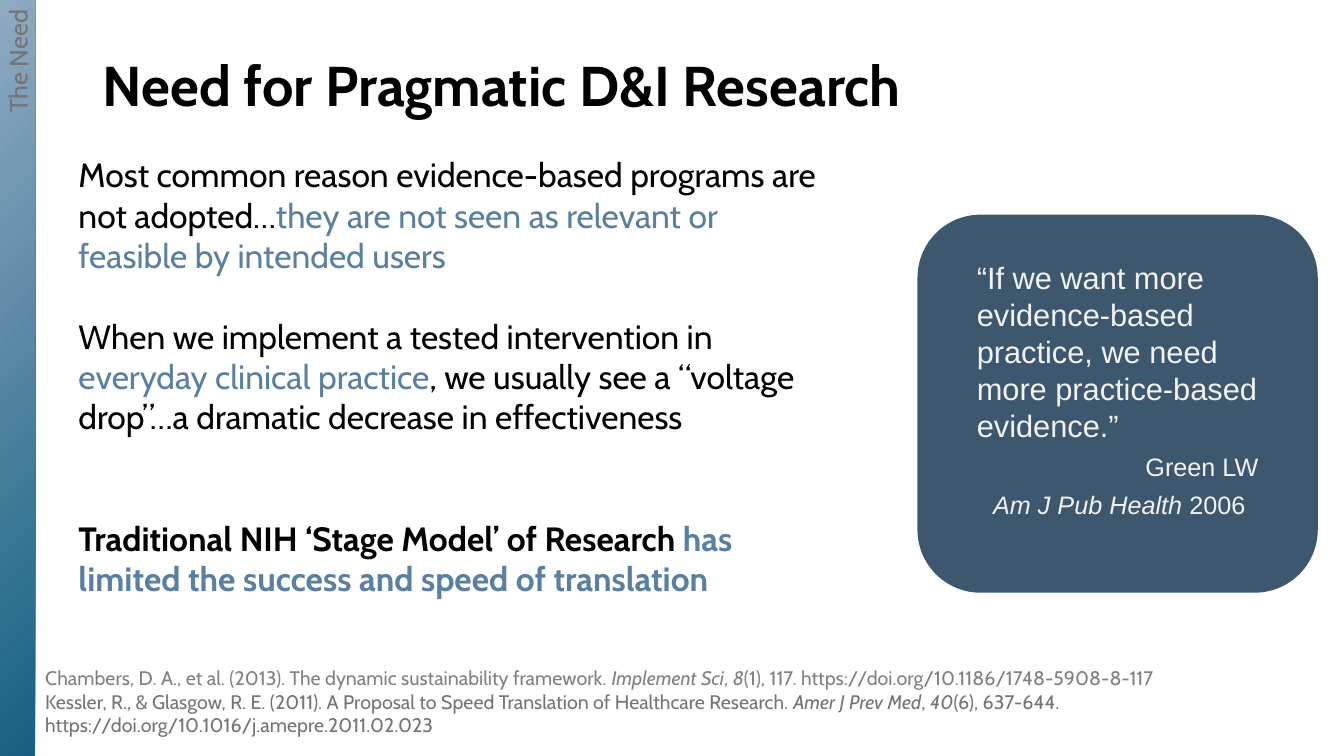
from lxml import etree
from pptx import Presentation
from pptx.dml.color import RGBColor
from pptx.enum.shapes import MSO_SHAPE
from pptx.enum.text import MSO_ANCHOR, PP_ALIGN
from pptx.oxml.ns import qn
from pptx.util import Inches, Pt

BLACK, BLUE, NAVY, PALE = "000000", "597FA1", "3D576F", "F2F2F2"
GREY, LIGHT_GREY = "747474", "808080"


def color(value):
    return RGBColor.from_string(value)


def span(text, **style):
    """A piece of text with its format: size, font, color, bold, italic."""
    return text, style


def para(*spans, **layout):
    """A paragraph with its format: align, before, line, right (indent in inches)."""
    return spans, layout


class Page:
    def __init__(self, deck, font):
        self.slide = deck.slides.add_slide(deck.slide_layouts[6])
        self.font = font

    def add_paras(self, frame, paras, **defaults):
        frame.word_wrap = True
        for index, (spans, layout) in enumerate(paras):
            paragraph = frame.paragraphs[0] if index == 0 else frame.add_paragraph()
            paragraph.alignment = layout.get("align", PP_ALIGN.LEFT)
            paragraph.space_before = Pt(layout.get("before", 0))
            paragraph.line_spacing = layout.get("line", 1.0)
            if "right" in layout:
                paragraph._p.get_or_add_pPr().set("marR", str(Inches(layout["right"])))
            for text, own in spans:
                style = {"font": self.font, **defaults, **own}
                run = paragraph.add_run()
                run.text = text
                run.font.name = style["font"]
                run.font.size = Pt(style["size"])
                run.font.bold = style.get("bold", False)
                run.font.italic = style.get("italic", False)
                run.font.color.rgb = color(style["color"])

    def text(self, left, top, width, height, paras, anchor=MSO_ANCHOR.TOP, **defaults):
        box = self.slide.shapes.add_textbox(
            Inches(left), Inches(top), Inches(width), Inches(height))
        box.text_frame.vertical_anchor = anchor
        self.add_paras(box.text_frame, paras, **defaults)

    def shape(self, kind, left, top, width, height, fill=None):
        shape = self.slide.shapes.add_shape(
            kind, Inches(left), Inches(top), Inches(width), Inches(height))
        shape.shadow.inherit = False
        shape.line.fill.background()
        if fill:
            shape.fill.solid()
            shape.fill.fore_color.rgb = color(fill)
        return shape

    def side_bar(self, width, height, label, start, end):
        bar = self.shape(MSO_SHAPE.RECTANGLE, 0, 0, width, height)
        bar.fill.gradient()
        for position, (stop, value) in enumerate(zip(bar.fill.gradient_stops, (start, end))):
            stop.color.rgb = color(value)
            stop.position = position
        # Radial gradient spreading from the top left corner
        gradient = bar._element.spPr.find(qn("a:gradFill"))
        linear = gradient.find(qn("a:lin"))
        radial = etree.Element(qn("a:path"), {"path": "circle"})
        etree.SubElement(radial, qn("a:fillToRect"), r="100000", b="100000")
        gradient.replace(linear, radial)
        # Label reading upwards
        frame = bar.text_frame
        frame.vertical_anchor = MSO_ANCHOR.MIDDLE
        frame._txBody.bodyPr.set("vert", "vert270")
        self.add_paras(frame, [para(span(label), align=PP_ALIGN.RIGHT)], size=18, color=GREY)


def main():
    deck = Presentation()
    deck.slide_width, deck.slide_height = Inches(13.33), Inches(7.5)
    page = Page(deck, "Cabin")

    # Quote card
    page.shape(MSO_SHAPE.ROUNDED_RECTANGLE, 9.1, 2.13, 3.97, 3.75, NAVY)
    page.text(9.59, 2.52, 3.06, 2.7, [
        para(span("“If we want more evidence-based practice, "
                  "we need more practice-based evidence.”", size=22)),
        para(span("Green LW"), align=PP_ALIGN.RIGHT, before=5.4, right=0.07),
        para(span("Am J Pub Health", italic=True), span(" 2006"),
             align=PP_ALIGN.RIGHT, before=5.4, right=0.2),
    ], font="Arial", size=18, color=PALE)

    # Title
    page.text(0.92, 0.28, 12.15, 1.19,
              [para(span("Need for Pragmatic D&I Research"), line=0.9)],
              anchor=MSO_ANCHOR.MIDDLE, size=40, bold=True, color=BLACK)

    # Section bar
    page.side_bar(0.35, 7.5, "The Need", "90AAC2", "156082")

    # References
    page.text(0.35, 6.56, 12.72, 0.81, [
        para(span("Chambers, D. A., et al. (2013). The dynamic sustainability framework. "),
             span("Implement Sci", italic=True), span(","), span(" 8", italic=True),
             span("(1), 117. https://doi.org/10.1186/1748-5908-8-117")),
        para(span("Kessler, R., & Glasgow, R. E. (2011). A Proposal to Speed Translation "
                  "of Healthcare Research. ", color=GREY),
             span("Amer J Prev Med", italic=True, color=GREY), span(",", color=GREY),
             span(" 40", italic=True, color=GREY),
             span("(6), 637-644. https://doi.org/10.1016/j.amepre.2011.02.023", color=GREY)),
    ], size=14, color=LIGHT_GREY)

    # Main points
    page.text(0.68, 1.48, 7.58, 4.95, [
        para(span("Most common reason evidence-based programs are not adopted…"),
             span("they are not seen as relevant or feasible by intended users", color=BLUE)),
        para(span("When we implement a tested intervention in "),
             span("everyday clinical practice", color=BLUE),
             span(", we usually see a “voltage drop”…a dramatic decrease in effectiveness"),
             before=29),
        para(span("Traditional NIH ‘Stage Model’ of Research ", bold=True),
             span("has limited the success and speed of translation", bold=True, color=BLUE),
             before=58),
    ], size=24, color=BLACK)

    deck.save("out.pptx")


if __name__ == "__main__":
    main()
